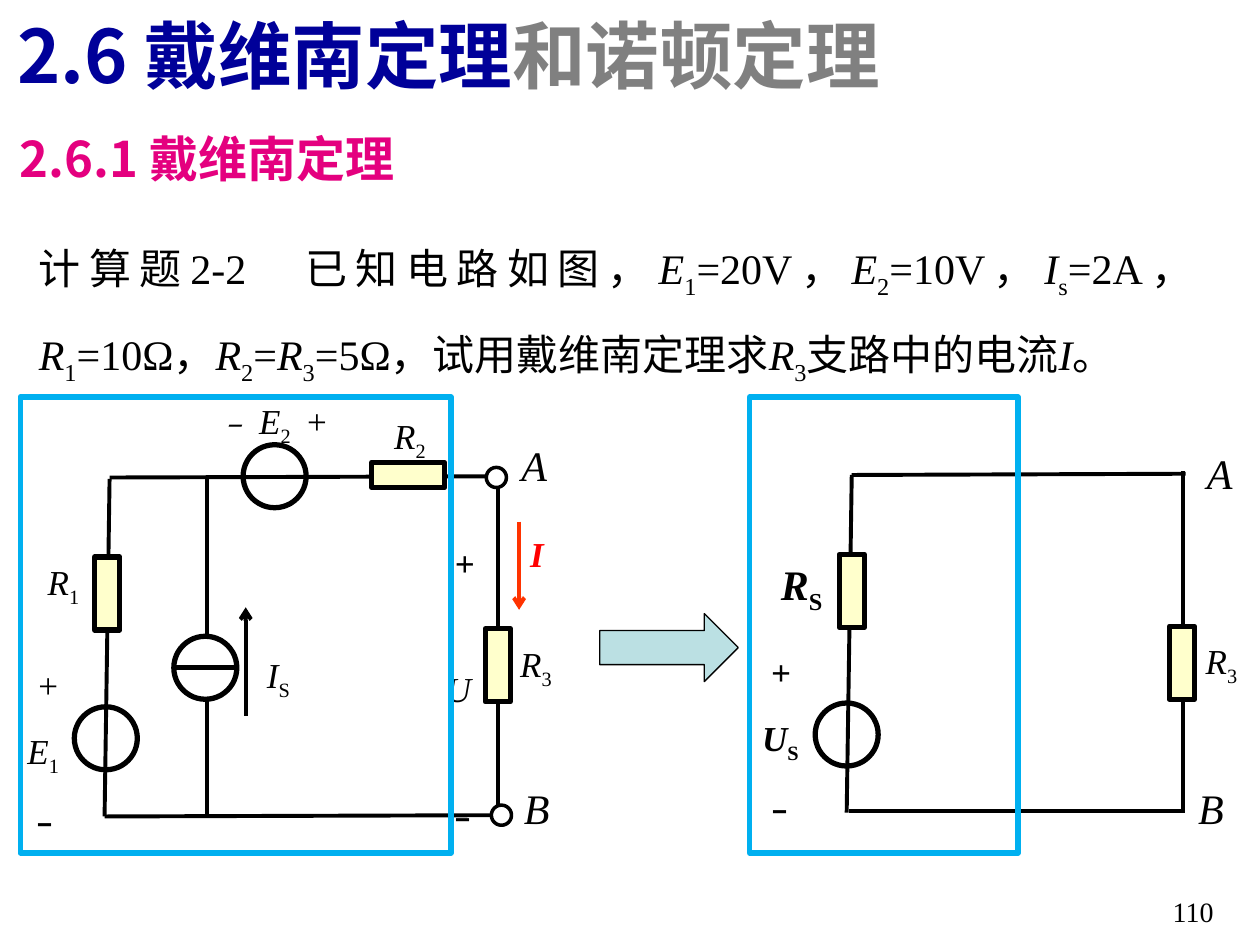
from itertools import groupby
from lxml import etree
from pptx import Presentation
from pptx.dml.color import RGBColor
from pptx.enum.shapes import MSO_CONNECTOR, MSO_SHAPE
from pptx.enum.text import MSO_AUTO_SIZE, PP_ALIGN
from pptx.oxml import parse_xml
from pptx.oxml.ns import nsdecls, qn
from pptx.util import Inches, Pt

STRAIGHT = MSO_CONNECTOR.STRAIGHT
RECT, OVAL, ARROW = MSO_SHAPE.RECTANGLE, MSO_SHAPE.OVAL, MSO_SHAPE.RIGHT_ARROW
FIT = MSO_AUTO_SIZE.SHAPE_TO_FIT_TEXT
LEFT, RIGHT, JUSTIFY = PP_ALIGN.LEFT, PP_ALIGN.RIGHT, PP_ALIGN.JUSTIFY

THEME = {
    "serif": "Times New Roman", "sans": "Noto Sans CJK SC",
    "ink": "000000", "navy": "000099", "gray": "808080", "pink": "E4007F",
    "cream": "FFFFCC", "white": "FFFFFF", "cyan": "00B0F0", "teal": "BBE0E3",
    "current": "FF3300", "red": "FF0000",
    "title": 42, "section": 28, "body": 24, "label": 20, "page": 16,
    "wire": 2.25, "outline": 3, "terminal": 2, "thin": 0.75,
}

# Markup: *italic*, ^bold^, _subscript_, ~secondary colour~
MARKS = {"*": "italic", "^": "bold", "_": "sub", "~": "muted"}

HEADINGS = [
    ((0.04, 0.03, 9.13, 0.81), ["^2.6 戴维南定理~和诺顿定理~^"],
     dict(size="title", font="sans", color="navy", shadow=True)),
    ((0.06, 0.97, 3.36, 0.57), ["^2.6.1 戴维南定理^"],
     dict(size="section", font="sans", color="pink", wrap=False, shadow=True)),
    ((0.21, 1.65, 9.36, 1.31),
     ["计算题2-2　已知电路如图，*E*_1_=20V，*E*_2_=10V，*I*_s_=2A，"
      "*R*_1_=10Ω，*R*_2_=*R*_3_=5Ω，试用戴维南定理求*R*_3_支路中的电流*I*。"],
     dict(size="body", spacing=1.5, align=JUSTIFY, shadow=True)),
]
LABELS = [
    ((0.28, 4.4, 0.54, 0.44), ["*R*_1_"], {}),
    ((4.03, 5.05, 0.49, 0.44), ["*R*_3_"], {}),
    ((3.03, 3.24, 0.6, 0.44), ["*R*_2_"], {}),
    ((0.12, 5.05, 0.77, 1.62), ["* +*", "*E*_1_", "^﹣^"], dict(spacing=1.5)),
    ((1.61, 3.12, 1.39, 0.44), ["*﹣ E*_2_\t+"], dict(tab=0.73)),
    ((2.02, 5.14, 0.77, 0.44), ["*I*_S_"], {}),
    ((3.44, 3.58, 0.77, 3.13), ["* ^+^*", "*^U^*".replace("^", ""), "^﹣^"],
     dict(spacing=3)),
    ((4.11, 4.18, 0.49, 0.44), ["*^I^*"], dict(color="red")),
    ((6.1, 4.38, 0.76, 0.5), ["^*R*_S_^"], dict(size="body")),
    ((9.47, 5.03, 0.49, 0.44), ["*R*_3_"], {}),
    ((5.95, 4.95, 0.77, 1.55), ["* ^+^*", "^*U*_S_^", "^﹣^"],
     dict(spacing=1.5)),
    ((8.31, 7.05, 1.42, 0.4), ["110"],
     dict(size="page", align=RIGHT, fit=False)),
]
NODES = [("A", 4.04, 3.44), ("B", 4.06, 6.16),
         ("A", 9.48, 3.5), ("B", 9.41, 6.16)]
WIRES = [
    (4.02, 3.78, 0.87, 3.79), (0.83, 6.48, 0.87, 3.8),
    (3.95, 6.44, 3.95, 3.76), (1.64, 6.47, 1.64, 3.79),
    (3.98, 6.47, 0.83, 6.48), (9.41, 3.76, 6.76, 3.77),
    (6.72, 6.45, 6.76, 3.77), (9.39, 6.45, 9.39, 3.74),
    (9.37, 6.44, 6.74, 6.44),
]
CURRENT_ARROWS = [((1.95, 5.68, 1.95, 4.82), "ink"),
                  ((4.12, 4.14, 4.12, 4.84), "current")]
RESISTORS = [(3.24, 3.77, 0), (0.85, 4.71, 90), (3.95, 5.28, 90),
             (6.76, 4.69, 90), (9.38, 5.26, 90)]
VOLTAGE_SOURCES = [(0.84, 5.86), (2.18, 3.78), (6.72, 5.83)]
CURRENT_SOURCE = (1.63, 5.3)
TERMINALS = [(3.94, 3.79), (3.98, 6.47)]
FRAMES = [(0.16, 3.15, 3.42, 3.62), (5.95, 3.15, 2.13, 3.62)]
RESISTOR_SIZE, SOURCE_SIZE, TERMINAL_SIZE = (0.58, 0.2), (0.5, 0.5), (0.16, 0.16)


def rgb(name):
    return RGBColor.from_string(THEME[name])


def styled_pieces(markup):
    active, styled = set(), []
    for char in markup:
        if char in MARKS:
            active ^= {MARKS[char]}
        else:
            styled.append((frozenset(active), char))
    for style, group in groupby(styled, key=lambda item: item[0]):
        yield style, "".join(char for _, char in group)


def add_text(slide, box, lines, size="label", font="serif", color="ink",
             spacing=None, align=LEFT, wrap=True, fit=True, shadow=False, tab=None):
    frame = slide.shapes.add_textbox(*map(Inches, box)).text_frame
    frame.word_wrap = wrap
    if fit:
        frame.auto_size = FIT
    for index, markup in enumerate(lines):
        paragraph = frame.add_paragraph() if index else frame.paragraphs[0]
        paragraph.alignment = align
        if spacing:
            paragraph.line_spacing = spacing
        if tab:
            stops = etree.SubElement(paragraph._p.get_or_add_pPr(), qn("a:tabLst"))
            etree.SubElement(stops, qn("a:tab"), pos=str(Inches(tab)), algn="l")
        for style, words in styled_pieces(markup):
            run = paragraph.add_run()
            run.text = words
            run.font.size = Pt(THEME[size])
            run.font.bold = "bold" in style
            run.font.italic = "italic" in style
            run.font.color.rgb = rgb("gray" if "muted" in style else color)
            run.font.name = THEME[font]
            props = run._r.get_or_add_rPr()
            if "sub" in style:
                props.set("baseline", "-25000")
            if shadow:
                props.find(qn("a:solidFill")).addnext(parse_xml(
                    f'<a:effectLst {nsdecls("a")}><a:outerShdw blurRad="38100" '
                    'dist="38100" dir="2700000"><a:srgbClr val="000000">'
                    '<a:alpha val="43000"/></a:srgbClr></a:outerShdw></a:effectLst>'))
            etree.SubElement(props, qn("a:ea"), typeface=THEME["sans"])


def add_line(slide, ends, color="ink", width="wire", arrow=False):
    line = slide.shapes.add_connector(STRAIGHT, *map(Inches, ends))
    line.line.color.rgb = rgb(color)
    line.line.width = Pt(THEME[width])
    if arrow:
        etree.SubElement(line.line._get_or_add_ln(), qn("a:tailEnd"), type="arrow")
    etree.SubElement(line._element.spPr, qn("a:effectLst"))


def add_part(slide, kind, box, fill=None, color="ink", width="outline", turn=0):
    part = slide.shapes.add_shape(kind, *map(Inches, box))
    part.shadow.inherit = False
    part.rotation = turn
    if fill:
        part.fill.solid()
        part.fill.fore_color.rgb = rgb(fill)
    else:
        part.fill.background()
    part.line.color.rgb = rgb(color)
    part.line.width = Pt(THEME[width])


def centered(x, y, size):
    width, height = size
    return x - width / 2, y - height / 2, width, height


def main():
    deck = Presentation()
    deck.slide_width, deck.slide_height = Inches(10), Inches(7.5)
    slide = deck.slides.add_slide(deck.slide_layouts[6])

    for box, lines, style in HEADINGS:
        add_text(slide, box, lines, **style)
    for ends in WIRES:
        add_line(slide, ends)
    for x, y, turn in RESISTORS:
        add_part(slide, RECT, centered(x, y, RESISTOR_SIZE), "cream", turn=turn)
    for x, y in VOLTAGE_SOURCES:
        add_part(slide, OVAL, centered(x, y, SOURCE_SIZE))
    x, y = CURRENT_SOURCE
    radius = SOURCE_SIZE[0] / 2
    add_part(slide, OVAL, centered(x, y, SOURCE_SIZE), "white")
    add_line(slide, (x - radius, y, x + radius, y), width="outline")
    for x, y in TERMINALS:
        add_part(slide, OVAL, centered(x, y, TERMINAL_SIZE), "white", width="terminal")
    for ends, color in CURRENT_ARROWS:
        add_line(slide, ends, color, arrow=True)
    for box, lines, style in LABELS:
        add_text(slide, box, lines, **style)
    for name, left, top in NODES:
        add_text(slide, (left, top, 0.41, 0.5), [f"*{name}*"], size="body", wrap=False)
    add_part(slide, ARROW, (4.76, 4.87, 1.1, 0.54), "teal", width="thin")
    for box in FRAMES:
        add_part(slide, RECT, box, color="cyan")

    deck.save("out.pptx")


if __name__ == "__main__":
    main()
